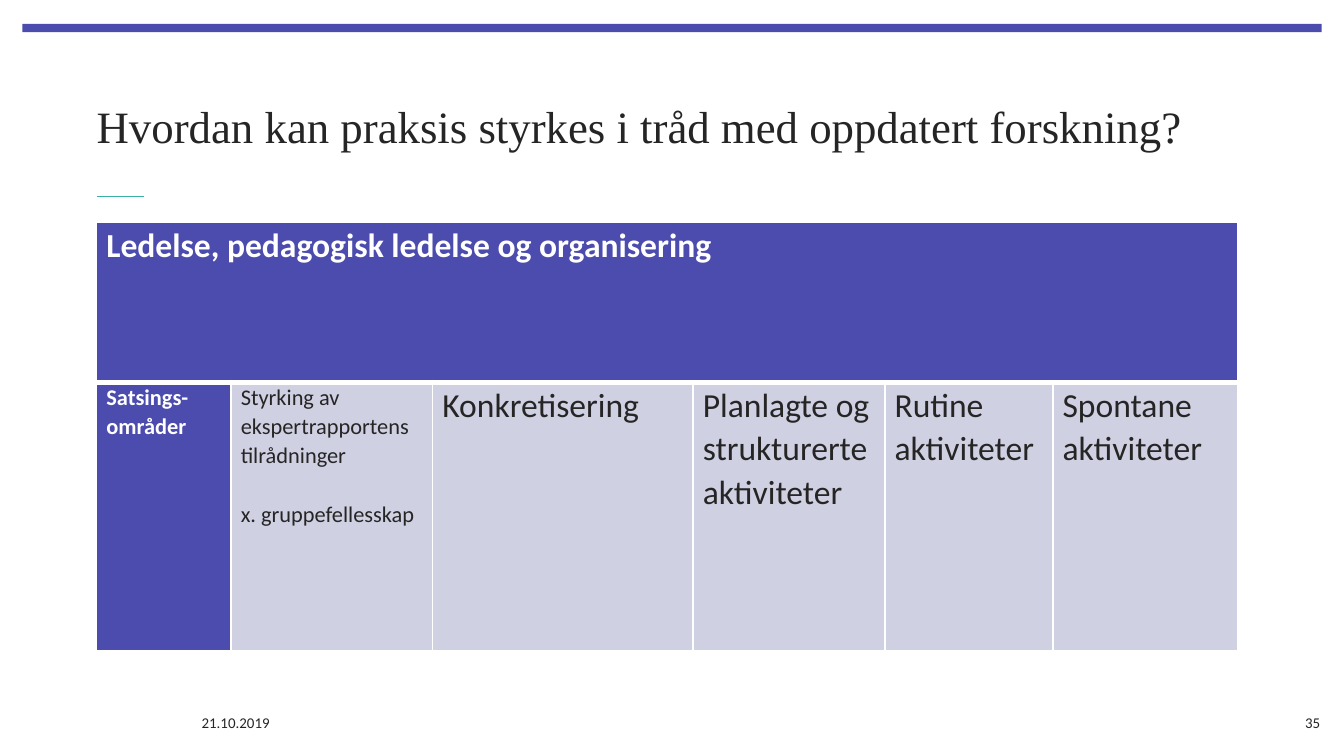
from lxml import etree
from pptx import Presentation
from pptx.dml.color import RGBColor
from pptx.enum.shapes import MSO_CONNECTOR, MSO_SHAPE
from pptx.enum.text import MSO_ANCHOR, PP_ALIGN
from pptx.oxml.ns import qn
from pptx.util import Pt

PX = 9525
RECTANGLE = MSO_SHAPE.RECTANGLE
STRAIGHT = MSO_CONNECTOR.STRAIGHT
MIDDLE = MSO_ANCHOR.MIDDLE
LEFT, RIGHT = PP_ALIGN.LEFT, PP_ALIGN.RIGHT
COLORS = {"violet": "4B4CAD", "teal": "3BAFA2", "ink": "252525",
          "white": "FFFFFF", "lavender": "D0D0E3"}
SANS, SERIF = "Calibri", "Times New Roman"

COLUMN_WIDTHS = [96, 144, 186, 137, 120, 132]
ROW_HEIGHTS = [114, 192]
HEADING = "Ledelse, pedagogisk ledelse og organisering"
AREAS = [
    (["Satsings-områder"], 12),
    (["Styrking av ekspertrapportens tilrådninger", "x. gruppefellesskap"], 12),
    (["Konkretisering"], 18),
    (["Planlagte og strukturerte aktiviteter"], 18),
    (["Rutine", "aktiviteter"], 18),
    (["Spontane", "aktiviteter"], 18),
]


def color(name):
    """Return the named colour."""
    return RGBColor.from_string(COLORS[name])


def emu(*lengths):
    """Turn px lengths into EMU."""
    return [length * PX for length in lengths]


def style(para, size, ink, font=SANS, bold=False):
    """Format every run of a paragraph."""
    for span in para.runs:
        span.font.name = font
        span.font.size = Pt(size)
        span.font.bold = bold
        span.font.color.rgb = color(ink)


def add_label(page, box, text, size, font=SANS, align=LEFT):
    """Place one line of text, centred vertically in the box."""
    frame = page.shapes.add_textbox(*emu(*box)).text_frame
    frame.word_wrap = True
    frame.vertical_anchor = MIDDLE
    frame.margin_left = frame.margin_right = 0
    frame.margin_top = frame.margin_bottom = 0
    frame.text = text
    para = frame.paragraphs[0]
    para.alignment = align
    style(para, size, "ink", font)


def add_top_bar(page, box):
    """Draw the violet bar along the top edge."""
    bar = page.shapes.add_shape(RECTANGLE, *emu(*box))
    bar.shadow.inherit = False
    bar.fill.solid()
    bar.fill.fore_color.rgb = color("violet")
    bar.line.fill.background()


def add_title(page, box):
    """Place the title with its short rule below."""
    left, top, width, height = box
    add_label(page, box, "Hvordan kan praksis styrkes i tråd med oppdatert forskning?",
              24, SERIF)
    rule_top = top + height + 5
    rule = page.shapes.add_connector(
        STRAIGHT, *emu(left, rule_top, left + 34, rule_top))
    rule.line.color.rgb = color("teal")
    rule.line.width = Pt(0.5)
    etree.SubElement(rule._element.spPr, qn("a:effectLst"))


def add_borders(cell, top, bottom):
    """Give a cell white borders with the given top and bottom widths in points."""
    properties = cell._tc.get_or_add_tcPr()
    for side, width in (("L", 1), ("R", 1), ("T", top), ("B", bottom)):
        line = etree.SubElement(properties, qn(f"a:ln{side}"), w=str(Pt(width)))
        fill = etree.SubElement(line, qn("a:solidFill"))
        etree.SubElement(fill, qn("a:srgbClr"), val=COLORS["white"])


def fill_cell(cell, lines, size, ink, bold):
    """Write a cell's paragraphs, setting later ones apart in small text."""
    cell.text_frame.text = "\n".join(lines)
    for index, para in enumerate(cell.text_frame.paragraphs):
        para.line_spacing = 1.07
        if index and size == 12:
            para.space_before = Pt(15.7)
        style(para, size, ink, bold=bold)


def add_area_table(page, box):
    """Place the table of focus areas under its merged heading."""
    table = page.shapes.add_table(
        len(ROW_HEIGHTS), len(COLUMN_WIDTHS), *emu(*box)).table
    for column, width in zip(table.columns, COLUMN_WIDTHS):
        column.width = width * PX
    for row, height in zip(table.rows, ROW_HEIGHTS):
        row.height = height * PX
    for row_index, row in enumerate(table.rows):
        for column_index, cell in enumerate(row.cells):
            is_header = row_index == 0 or column_index == 0
            cell.margin_left = cell.margin_right = 7 * PX
            cell.margin_top = cell.margin_bottom = 0
            add_borders(cell, *((1, 3) if row_index == 0 else (3, 1)))
            cell.fill.solid()
            cell.fill.fore_color.rgb = color("violet" if is_header else "lavender")
            if row_index:
                lines, size = AREAS[column_index]
                fill_cell(cell, lines, size, "white" if is_header else "ink", is_header)
    heading = table.cell(0, 0)
    heading.merge(table.cell(0, len(COLUMN_WIDTHS) - 1))
    fill_cell(heading, [HEADING], 18, "white", True)


def add_footer(page, box):
    """Place the date at the left and the page number at the right."""
    left, top, width, height = box
    add_label(page, (left, top, 174, height), "21.10.2019", 8)
    add_label(page, (left + width - 224, top, 224, height), "35", 8, align=RIGHT)


def main():
    """Build the deck and save it."""
    deck = Presentation()
    deck.slide_width, deck.slide_height = emu(960, 540)
    page = deck.slides.add_slide(deck.slide_layouts[6])
    add_top_bar(page, (16, 17, 928, 6))
    add_title(page, (69, 45, 836, 90))
    add_area_table(page, (69, 159, sum(COLUMN_WIDTHS), sum(ROW_HEIGHTS)))
    add_footer(page, (144, 508, 799, 16))
    deck.save("out.pptx")


if __name__ == "__main__":
    main()
